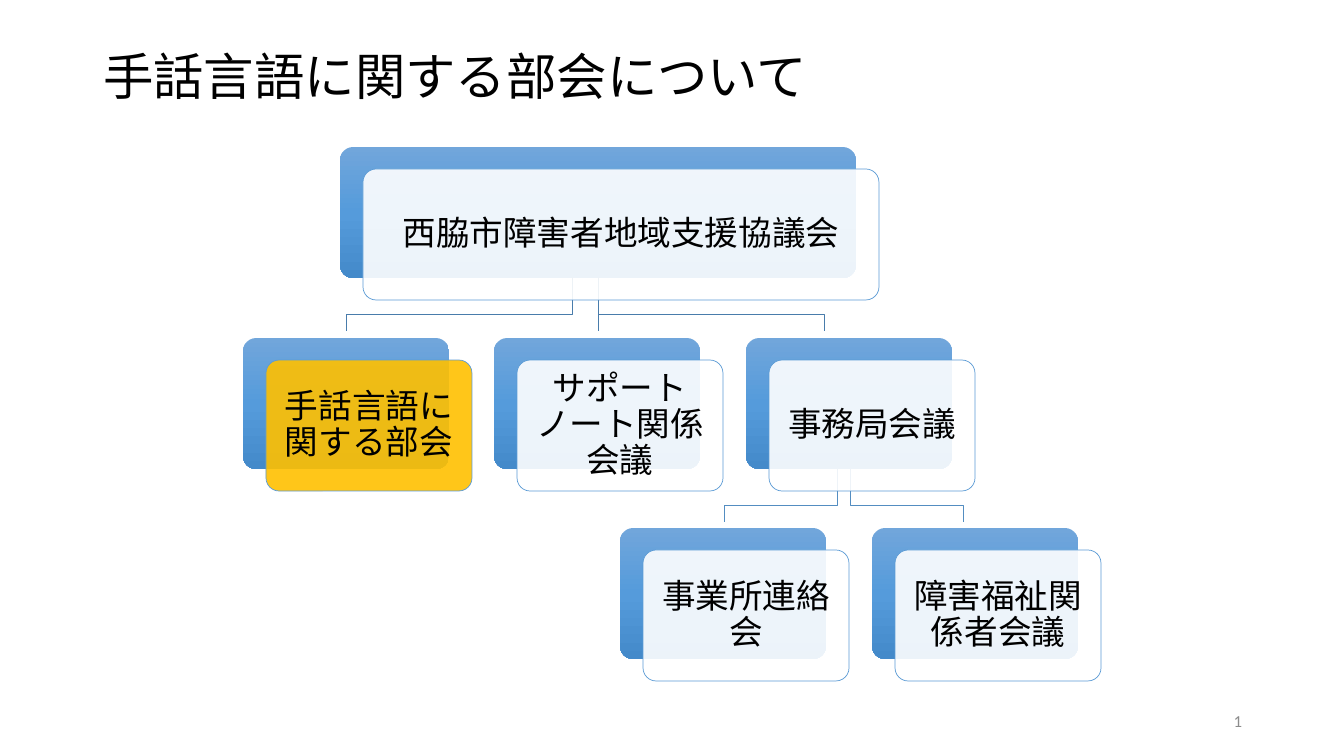
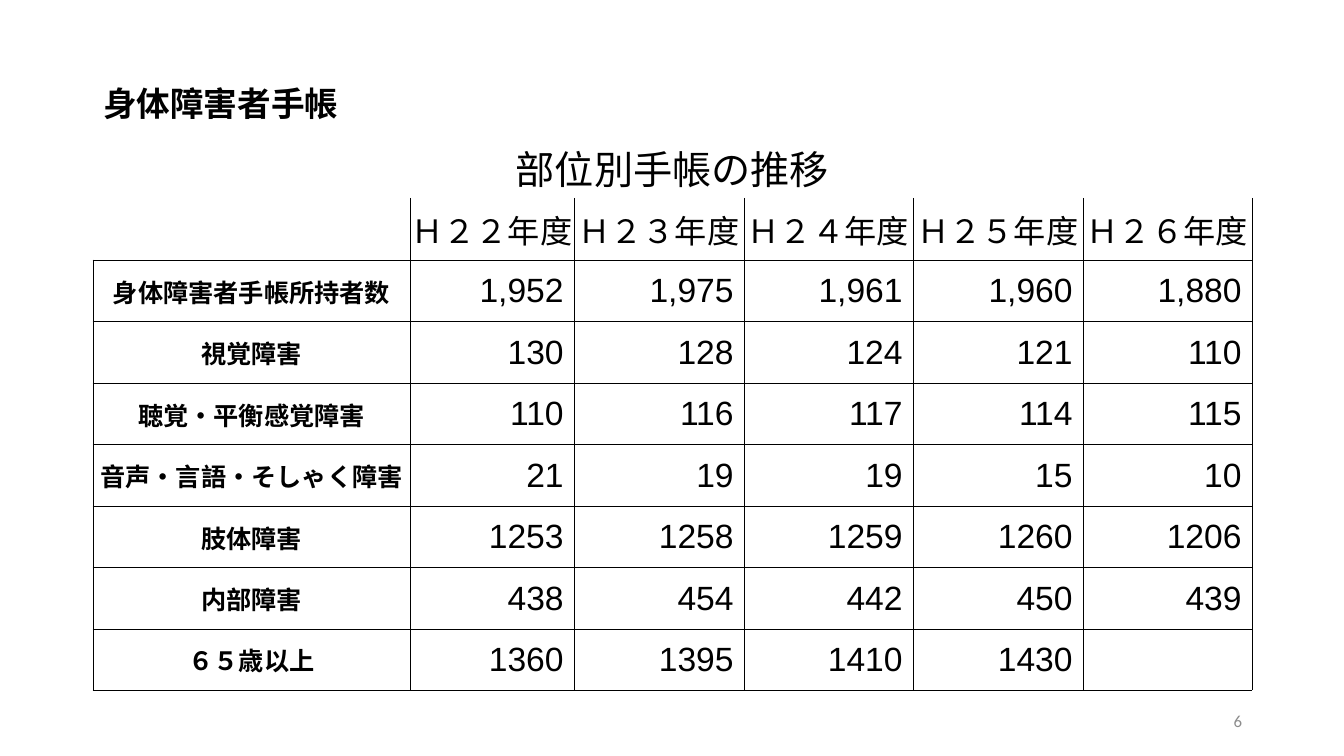
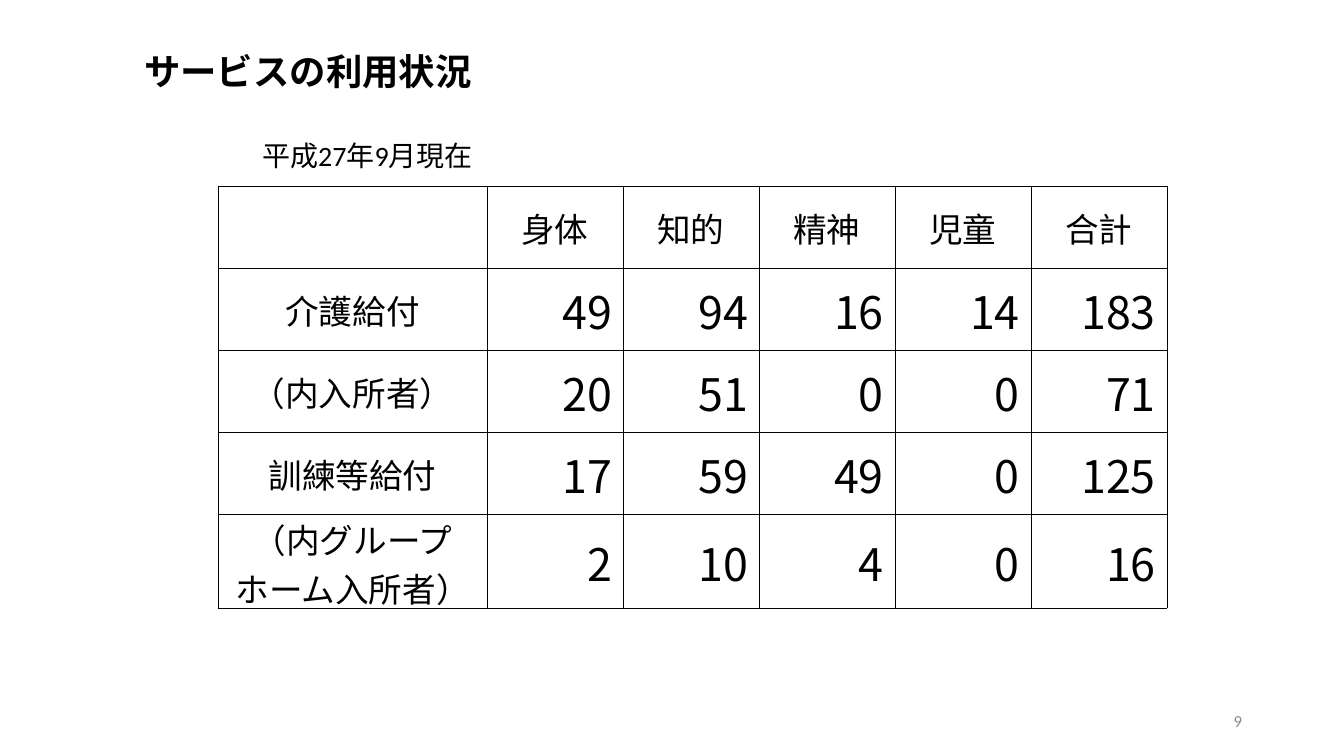
import copy
import pptx
import pptx.dml.color
import pptx.enum.shapes
import pptx.enum.text
import pptx.oxml
import pptx.oxml.ns
import pptx.util

PX = 9071
SANS, ARIAL, CJK = "Calibri", "Arial", "Noto Sans CJK JP"
BLACK, GREY, WHITE, BLUE, GOLD = "000000", "8C8C8C", "FFFFFF", "5B9BD5", "FFC000"
GRADIENT = [(0, "71A6DB"), (0.5, "559BDB"), (1, "448ACA")]
ALIGN = pptx.enum.text.PP_ALIGN
MIDDLE = pptx.enum.text.MSO_ANCHOR.MIDDLE
ROUNDED = pptx.enum.shapes.MSO_SHAPE.ROUNDED_RECTANGLE
qn = pptx.oxml.ns.qn


def rgb(value):
    return pptx.dml.color.RGBColor.from_string(value)


def write(paragraph, text, size, name=SANS, align=ALIGN.LEFT, bold=False, color=BLACK):
    paragraph.text = text
    paragraph.alignment = align
    paragraph.font.size = pptx.util.Pt(size)
    paragraph.font.name = name
    paragraph.font.bold = bold
    paragraph.font.color.rgb = rgb(color)


presentation = pptx.Presentation()
presentation.slide_width = 1344 * PX
presentation.slide_height = 756 * PX

pages = [
    ("1", "手話言語に関する部会について", 36, False, (93, 40, 1159, 78)),
    ("6", "身体障害者手帳", 24, True, (93, 33, 1159, 146)),
    ("9", "サービスの利用状況", 26, True, (134, 40, 1159, 146)),
]
slides = []
for number, heading, size, bold, box in pages:
    slide = presentation.slides.add_slide(presentation.slide_layouts[5])
    slides.append(slide)
    title = slide.shapes.title
    title.left, title.top, title.width, title.height = [length * PX for length in box]
    title.text_frame.auto_size = pptx.enum.text.MSO_AUTO_SIZE.NONE
    title.text_frame.vertical_anchor = MIDDLE
    paragraph = title.text_frame.paragraphs[0]
    write(paragraph, heading, size, bold=bold)
    paragraph.line_spacing = 0.9
    footer = slide.shapes.add_textbox(950 * PX, 701 * PX, 302 * PX, 40 * PX)
    footer.text_frame.word_wrap = True
    footer.text_frame.vertical_anchor = MIDDLE
    write(footer.text_frame.paragraphs[0], number, 12, align=ALIGN.RIGHT, color=GREY)

shapes = slides[0].shapes
nodes = [
    ("西脇市障害者地域支援協議会", 340, 147, 516, WHITE),
    ("手話言語に関する部会", 243, 338, 206, GOLD),
    ("サポートノート関係会議", 494, 338, 206, WHITE),
    ("事務局会議", 746, 338, 206, WHITE),
    ("事業所連絡会", 620, 528, 206, WHITE),
    ("障害福祉関係者会議", 872, 528, 206, WHITE),
]
node_height = 131
backs = []
for text, left, top, width, color in nodes:
    back = shapes.add_shape(ROUNDED, left * PX, top * PX, width * PX, node_height * PX)
    back.adjustments[0] = 0.1
    back.shadow.inherit = False
    back.line.fill.background()
    back.fill.gradient()
    back.fill.gradient_angle = 270
    stop_list = back.element.spPr.find(".//" + qn("a:gsLst"))
    stop_list.append(copy.deepcopy(stop_list[0]))
    for stop, (position, stop_color) in zip(back.fill.gradient_stops, GRADIENT):
        stop.position = position
        stop.color.rgb = rgb(stop_color)
    backs.append(back)

elbows = [
    (572, 346, 277, "497CAB"),
    (598, 824, 277, "497CAB"),
    (837, 724, 468, "538DC1"),
    (850, 963, 468, "538DC1"),
]
for start, end, top, color in elbows:
    builder = shapes.build_freeform(start, top, scale=PX)
    builder.add_line_segments([(start, top + 37), (end, top + 37), (end, top + 54)], close=False)
    elbow = builder.convert_to_shape()
    elbow.shadow.inherit = False
    elbow.fill.background()
    elbow.line.color.rgb = rgb(color)
    elbow.line.width = pptx.util.Pt(0.5)

stem = shapes.add_connector(
    pptx.enum.shapes.MSO_CONNECTOR.STRAIGHT, 598 * PX, 278 * PX, 598 * PX, 331 * PX)
stem.begin_connect(backs[0], 2)
stem.line.color.rgb = rgb("497CAB")
stem.line.width = pptx.util.Pt(0.5)
stem.element.spPr.append(pptx.oxml.parse_xml(f"<a:effectLst {pptx.oxml.ns.nsdecls('a')}/>"))

for text, left, top, width, color in nodes:
    front = shapes.add_shape(
        ROUNDED, (left + 23) * PX, (top + 22) * PX, width * PX, node_height * PX)
    front.adjustments[0] = 0.1
    front.shadow.inherit = False
    front.fill.solid()
    front.fill.fore_color.rgb = rgb(color)
    fill_color = front.element.spPr.find(qn("a:solidFill")).find(qn("a:srgbClr"))
    fill_color.append(
        pptx.oxml.parse_xml(f"<a:alpha {pptx.oxml.ns.nsdecls('a')} val='90000'/>"))
    front.line.color.rgb = rgb(BLUE)
    front.line.width = pptx.util.Pt(0.5)
    frame = front.text_frame
    frame.word_wrap = True
    frame.vertical_anchor = MIDDLE
    frame.margin_left = frame.margin_right = frame.margin_top = frame.margin_bottom = 10 * PX
    write(frame.paragraphs[0], text, 24, align=ALIGN.CENTER)
    frame.paragraphs[0].line_spacing = 0.9

date = slides[2].shapes.title.text_frame.add_paragraph()
write(date, "平成27年9月現在", 20)
date.line_spacing = 0.9
date.space_before = pptx.util.Pt(35)
date._p.get_or_add_pPr().set("marL", str(118 * PX))

handbook_rows = [
    ["部位別手帳の推移", "", "", "", "", ""],
    ["", "Ｈ２２年度", "Ｈ２３年度", "Ｈ２４年度", "Ｈ２５年度", "Ｈ２６年度"],
    ["身体障害者手帳所持者数", "1,952", "1,975", "1,961", "1,960", "1,880"],
    ["視覚障害", "130", "128", "124", "121", "110"],
    ["聴覚・平衡感覚障害", "110", "116", "117", "114", "115"],
    ["音声・言語・そしゃく障害", "21", "19", "19", "15", "10"],
    ["肢体障害", "1253", "1258", "1259", "1260", "1206"],
    ["内部障害", "438", "454", "442", "450", "439"],
    ["６５歳以上", "1360", "1395", "1410", "1430", ""],
]
service_rows = [
    ["", "身体", "知的", "精神", "児童", "合計"],
    ["介護給付", "49", "94", "16", "14", "183"],
    ["（内入所者）", "20", "51", "0", "0", "71"],
    ["訓練等給付", "17", "59", "49", "0", "125"],
    ["（内グループ\nホーム入所者）", "2", "10", "4", "0", "16"],
]
tables = [
    (slides[1], handbook_rows, 93, 135, [317, 164, 170, 169, 170, 169],
     [63] + [62, 61] * 4, 1, ARIAL, (23, 18, 24), True),
    (slides[2], service_rows, 218, 186, [269] + [136] * 5,
     [82] * 4 + [94], 0, CJK, (24, 24, 32), False),
]
for slide, rows, left, top, widths, heights, header, name, sizes, bold_labels in tables:
    header_size, label_size, value_size = sizes
    table = slide.shapes.add_table(
        len(rows), len(widths), left * PX, top * PX,
        sum(widths) * PX, sum(heights) * PX).table
    table.first_row = False
    table.horz_banding = False
    for column, width in zip(table.columns, widths):
        column.width = width * PX
    for row, height in zip(table.rows, heights):
        row.height = height * PX
    for row_index, values in enumerate(rows):
        for column_index, value in enumerate(values):
            cell = table.cell(row_index, column_index)
            cell.fill.background()
            cell.vertical_anchor = MIDDLE
            cell.margin_left = cell.margin_right = cell.margin_top = PX
            cell.margin_bottom = 0
            paragraph = cell.text_frame.paragraphs[0]
            if row_index < header:
                write(paragraph, value, 28, CJK, ALIGN.CENTER)
                sides = ""
            elif row_index == header:
                write(paragraph, value, header_size, name, ALIGN.CENTER)
                sides = "LRTB" if header == 0 else "LRB" if column_index else "RB"
            else:
                sides = "LRTB"
                if column_index:
                    write(paragraph, value and value + " ", value_size, name, ALIGN.RIGHT)
                else:
                    write(paragraph, value, label_size, name, ALIGN.CENTER, bold_labels)
            properties = cell._tc.get_or_add_tcPr()
            for position, side in enumerate("LRTB"):
                paint = "<a:noFill/>"
                if side in sides:
                    paint = f"<a:solidFill><a:srgbClr val='{BLACK}'/></a:solidFill>"
                properties.insert(position, pptx.oxml.parse_xml(
                    f"<a:ln{side} {pptx.oxml.ns.nsdecls('a')} w='6350'>{paint}</a:ln{side}>"))
    if header:
        table.cell(0, 0).merge(table.cell(0, len(widths) - 1))

presentation.save("out.pptx")
